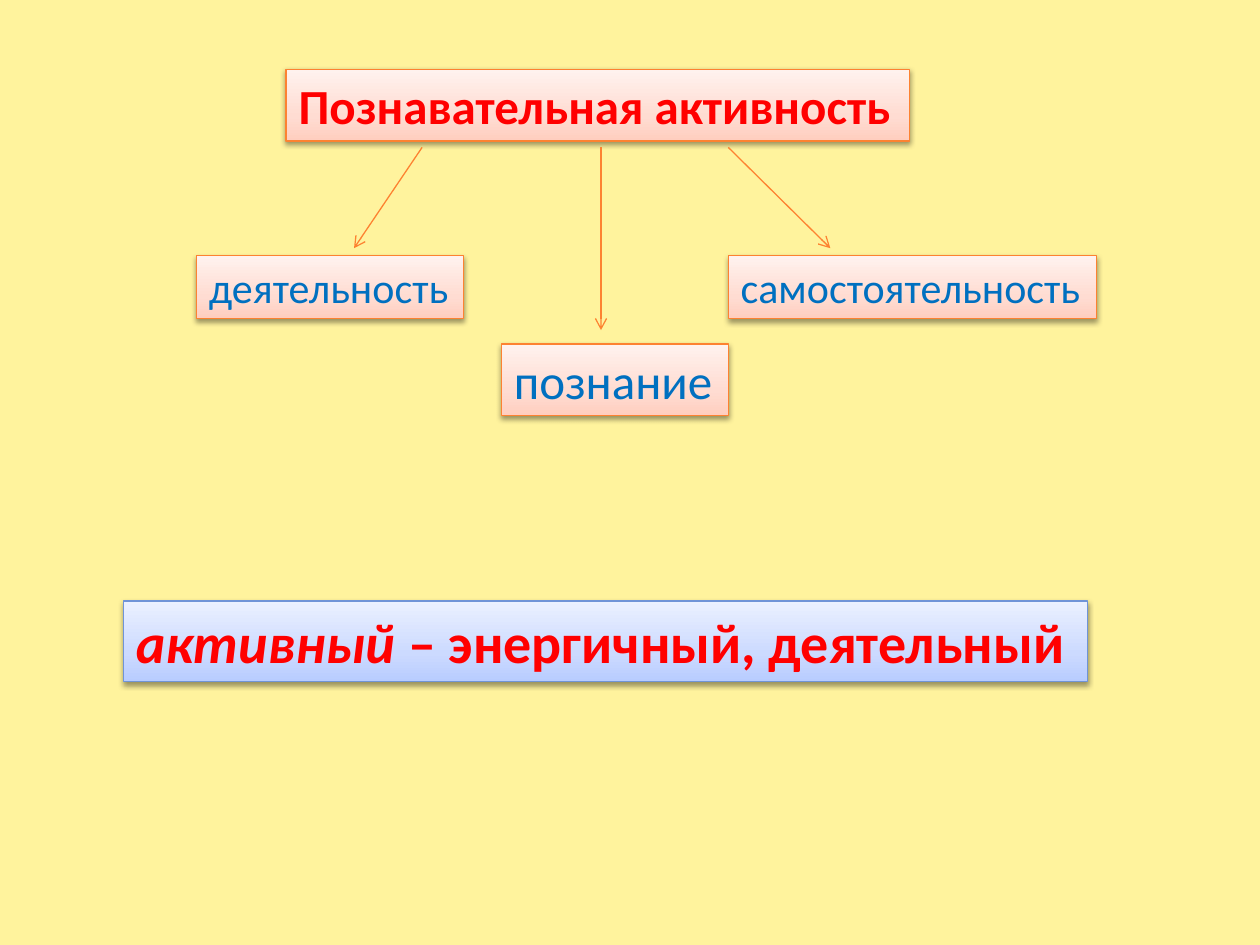
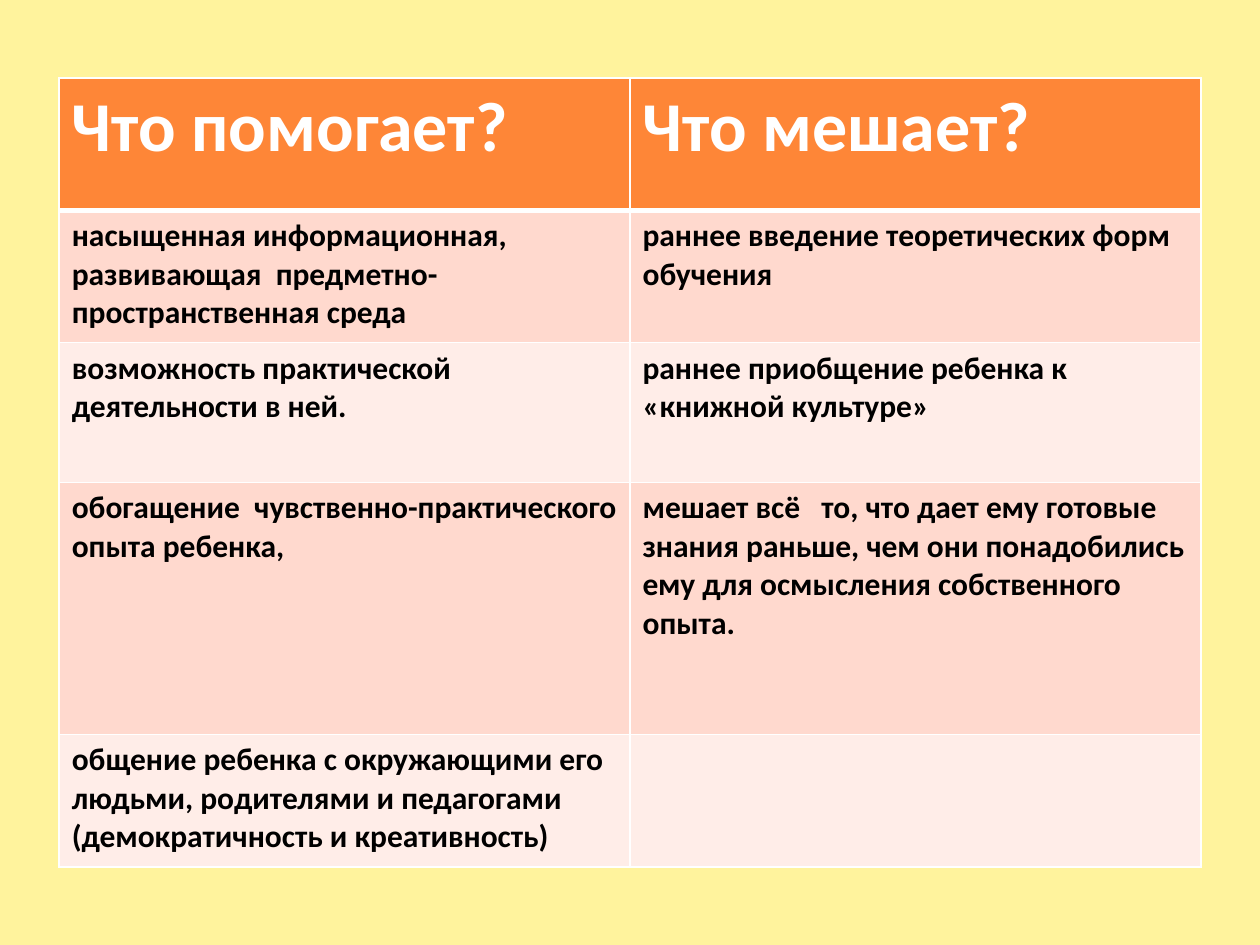
from dataclasses import dataclass
from typing import NamedTuple

from pptx import Presentation
from pptx.dml.color import RGBColor
from pptx.enum.shapes import MSO_CONNECTOR, MSO_SHAPE
from pptx.enum.text import MSO_ANCHOR, MSO_AUTO_SIZE, PP_ALIGN
from pptx.oxml import parse_xml
from pptx.oxml.ns import nsdecls, qn
from pptx.util import Pt

RECT = MSO_SHAPE.RECTANGLE
LINE = MSO_CONNECTOR.STRAIGHT
TOP = MSO_ANCHOR.TOP
LEFT = PP_ALIGN.LEFT
FIXED = MSO_AUTO_SIZE.NONE

PX = 9144
FONT = "Calibri"
NS = nsdecls("a")

HEX = {
    "back": "FFF39D",
    "edge": "FD8231",
    "rim": "7094D7",
    "red": "FF0000",
    "blue": "0070C0",
    "head": "FE8637",
    "dark": "FFD9CE",
    "pale": "FFEDE8",
    "white": "FFFFFF",
    "black": "000000",
}
PEACH = ("FFCEBF", "FFDCD2", "FFF2EE")
SKY = ("B8CCFF", "CCDAFF", "EBF1FF")
STOPS = (0, 35, 100)


class Run(NamedTuple):
    text: str
    italic: bool = False


@dataclass(frozen=True)
class Box:
    x: int
    y: int
    w: int
    h: int
    runs: tuple[Run, ...]
    size: int
    color: str = "blue"
    bold: bool = False
    tones: tuple[str, str, str] = PEACH
    edge: str = "edge"


class Arrow(NamedTuple):
    x1: int
    y1: int
    x2: int
    y2: int


TITLE = Box(227, 55, 495, 57, (Run("Познавательная активность"),), 28, "red", True)
BOXES = (
    Box(578, 203, 292, 50, (Run("самостоятельность"),), 24),
    Box(398, 273, 180, 57, (Run("познание"),), 28),
    Box(156, 203, 212, 50, (Run("деятельность"),), 24),
    Box(98, 477, 765, 64,
        (Run("активный", True), Run(" – энергичный, деятельный")),
        32, "red", True, SKY, "rim"),
)
ARROWS = (
    Arrow(578, 117, 659, 197),
    Arrow(335, 117, 281, 197),
    Arrow(477, 117, 477, 262),
)

COL = 453
ROWS = (105, 105, 111, 200, 105)
CELLS = (
    ("Что помогает?", "Что мешает?"),
    ("насыщенная информационная, развивающая  предметно-пространственная среда",
     "раннее введение теоретических форм обучения"),
    ("возможность практической деятельности в ней.",
     "раннее приобщение ребенка к «книжной культуре»"),
    ("обогащение  чувственно-практического опыта ребенка,",
     "мешает всё   то, что дает ему готовые знания раньше, чем они "
     "понадобились ему для осмысления собственного опыта."),
    ("общение ребенка с окружающими его людьми, родителями и педагогами\n"
     "(демократичность и креативность)", ""),
)


def tint(name: str) -> RGBColor:
    return RGBColor.from_string(HEX[name])


def write(para, text: str, *, size: int, color: str,
          bold: bool = False, italic: bool = False) -> None:
    run = para.add_run()
    run.text = text
    font = run.font
    font.name = FONT
    font.size = Pt(size)
    font.bold = bold
    font.italic = italic
    font.color.rgb = tint(color)


def shade(tones: tuple[str, str, str]):
    stops = "".join(
        f'<a:gs pos="{pos * 1000}"><a:srgbClr val="{tone}"/></a:gs>'
        for pos, tone in zip(STOPS, tones))
    return parse_xml(
        f'<a:gradFill {NS} rotWithShape="1"><a:gsLst>{stops}</a:gsLst>'
        '<a:lin ang="16200000" scaled="1"/></a:gradFill>')


def shadow():
    return parse_xml(
        f'<a:effectLst {NS}><a:outerShdw blurRad="{Pt(3.1)}" dist="{Pt(1.6)}" '
        'dir="5400000" rotWithShape="0"><a:srgbClr val="000000">'
        '<a:alpha val="38000"/></a:srgbClr></a:outerShdw></a:effectLst>')


def dress(shape, box: Box) -> None:
    shape.left, shape.top = box.x * PX, box.y * PX
    shape.width, shape.height = box.w * PX, box.h * PX
    props = shape.element.spPr
    props.append(shade(box.tones))
    shape.line.color.rgb = tint(box.edge)
    shape.line.width = Pt(0.75)
    props.append(shadow())
    frame = shape.text_frame
    frame.auto_size = FIXED
    frame.word_wrap = True
    frame.margin_right = 0
    frame.vertical_anchor = TOP
    para = frame.paragraphs[0]
    para.alignment = LEFT
    for run in box.runs:
        write(para, run.text, size=box.size, color=box.color,
              bold=box.bold, italic=run.italic)


def point(slide, arrow: Arrow) -> None:
    link = slide.shapes.add_connector(LINE, *(n * PX for n in arrow))
    link.line.color.rgb = tint("edge")
    link.line.width = Pt(0.75)
    props = link.element.spPr
    props.find(qn("a:ln")).append(parse_xml(f'<a:tailEnd {NS} type="arrow"/>'))
    props.append(parse_xml(f"<a:effectLst {NS}/>"))


def frame_cell(cell, base: int) -> None:
    props = cell._tc.get_or_add_tcPr()
    for side, width in (("L", 1), ("R", 1), ("T", 1), ("B", base)):
        props.append(parse_xml(
            f'<a:ln{side} {NS} w="{Pt(width)}"><a:solidFill>'
            f'<a:srgbClr val="{HEX["white"]}"/></a:solidFill></a:ln{side}>'))


def fill_cell(cell, text: str, row: int) -> None:
    head = row == 0
    frame_cell(cell, 3 if head else 1)
    cell.fill.solid()
    cell.fill.fore_color.rgb = tint("head" if head else "dark" if row % 2 else "pale")
    if not text:
        return
    frame = cell.text_frame
    for i, line in enumerate(text.split("\n")):
        para = frame.add_paragraph() if i else frame.paragraphs[0]
        write(para, line, size=40 if head else 18,
              color="white" if head else "black", bold=True)


def draw_scheme(deck) -> None:
    slide = deck.slides.add_slide(deck.slide_layouts[5])
    dress(slide.shapes.title, TITLE)
    for box in BOXES:
        dress(slide.shapes.add_shape(RECT, 0, 0, PX, PX), box)
    for arrow in ARROWS:
        point(slide, arrow)


def draw_table(deck) -> None:
    slide = deck.slides.add_slide(deck.slide_layouts[6])
    table = slide.shapes.add_table(
        len(CELLS), 2, 47 * PX, 62 * PX, 2 * COL * PX, sum(ROWS) * PX).table
    for col in table.columns:
        col.width = COL * PX
    for r, (high, texts) in enumerate(zip(ROWS, CELLS)):
        table.rows[r].height = high * PX
        for c, text in enumerate(texts):
            fill_cell(table.cell(r, c), text, r)


def main() -> None:
    deck = Presentation()
    deck.slide_width, deck.slide_height = 1000 * PX, 750 * PX
    back = deck.slide_master.background.fill
    back.solid()
    back.fore_color.rgb = tint("back")
    draw_scheme(deck)
    draw_table(deck)
    deck.save("out.pptx")


if __name__ == "__main__":
    main()
